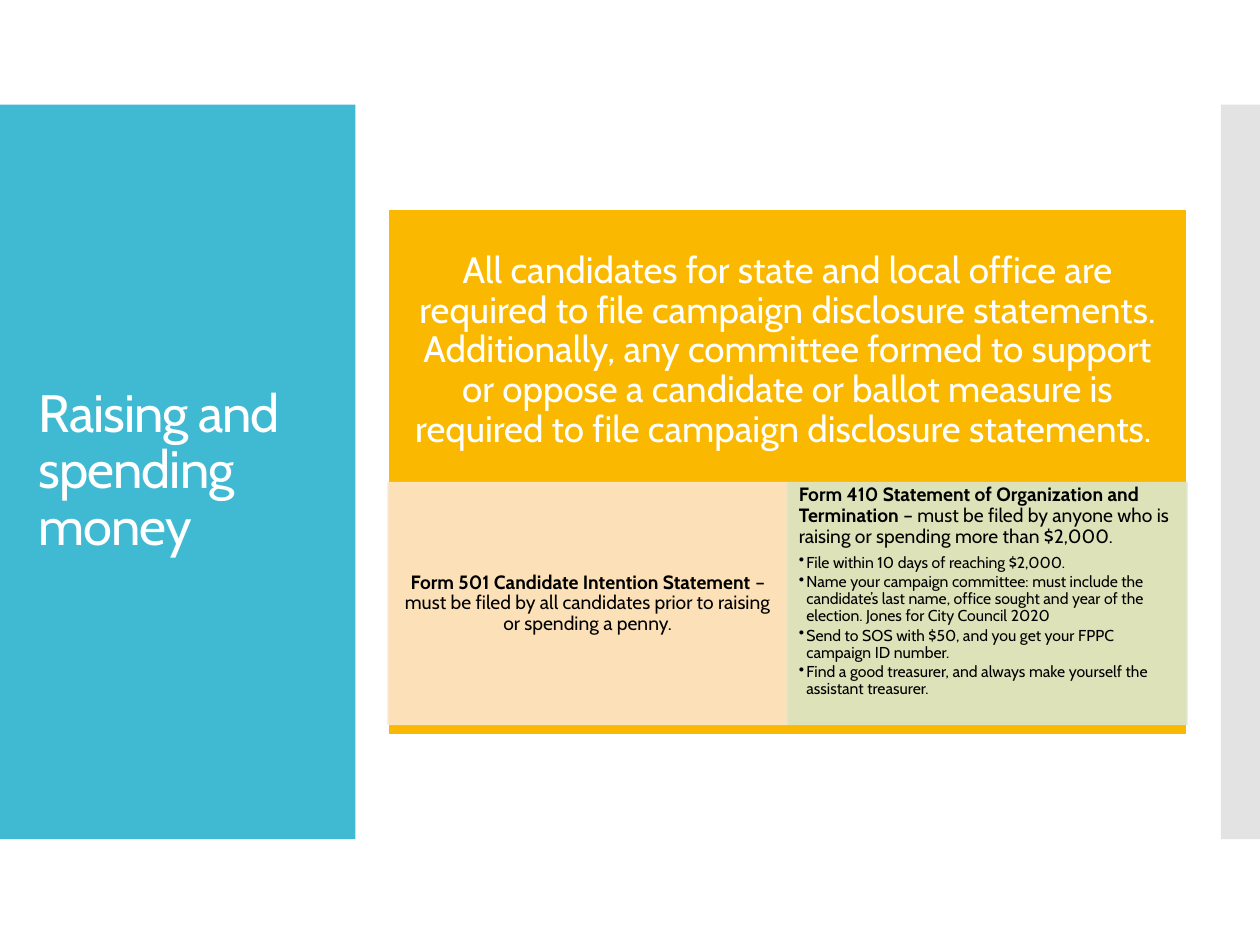
from lxml.etree import SubElement
from pptx import Presentation
from pptx.dml.color import RGBColor
from pptx.enum.shapes import MSO_SHAPE
from pptx.enum.text import MSO_ANCHOR, PP_ALIGN
from pptx.oxml.ns import qn
from pptx.util import Inches, Pt

FONT = "Cabin"
COLORS = {"teal": "40BAD2", "grey": "C8C8C8", "gold": "FAB900", "peach": "FDE6CC",
          "green": "DCE7CD", "white": "FFFFFF", "black": "000000"}
TITLE = "Raising and spending money"
INTRO = ("All candidates for state and local office are required to file campaign "
         "disclosure statements. Additionally, any committee formed to support or oppose "
         "a candidate or ballot measure is required to file campaign disclosure statements. ")
FORMS = [
    {"color": "peach", "anchor": MSO_ANCHOR.MIDDLE, "align": PP_ALIGN.CENTER,
     "name": "Form 501 Candidate Intention Statement ",
     "rule": "– must be filed by all candidates prior to raising or spending a penny.",
     "steps": []},
    {"color": "green", "anchor": MSO_ANCHOR.TOP, "align": PP_ALIGN.LEFT,
     "name": "Form 410 Statement of Organization and Termination ",
     "rule": "– must be filed by anyone who is raising or spending more than $2,000.",
     "steps": [
         "File within 10 days of reaching $2,000.",
         "Name your campaign committee: must include the candidate’s last name, "
         "office sought and year of the election. Jones for City Council 2020",
         "Send to SOS with $50, and you get your FPPC campaign ID number.",
         "Find a good treasurer, and always make yourself the assistant treasurer."]},
]

WIDTH, HEIGHT = 10, 7.5
BAND_TOP, BAND_HEIGHT = 0.83, 5.83
LEFT, TOP, PANEL_W, PANEL_H = 3.08, 1.66, 6.34, 4.17
INTRO_H, FORM_TOP, FORM_H = 2.25, 3.83, 1.92


def rgb(name):
    return RGBColor.from_string(COLORS[name])


def set_alpha(fill, percent):
    color = fill._xPr.find(qn("a:solidFill"))[0]
    SubElement(color, qn("a:alpha")).set("val", str(percent * 1000))


def add_box(s, box, color, line=None, alpha=None):
    sp = s.shapes.add_shape(MSO_SHAPE.RECTANGLE, *map(Inches, box))
    sp.shadow.inherit = False
    sp.fill.solid()
    sp.fill.fore_color.rgb = rgb(color)
    if line:
        sp.line.color.rgb = rgb(line)
        sp.line.width = Pt(0.85)
    else:
        sp.line.fill.background()
    if alpha:
        set_alpha(sp.fill, alpha)
        if line:
            set_alpha(sp.line.fill, alpha)
    return sp


def add_text(s, box, anchor, margins):
    tf = s.shapes.add_textbox(*map(Inches, box)).text_frame
    tf.word_wrap = True
    tf.vertical_anchor = anchor
    tf.margin_left = tf.margin_right = Inches(margins[0])
    tf.margin_top = tf.margin_bottom = Inches(margins[1])
    return tf


def write(p, parts, size, color, align=PP_ALIGN.LEFT, after=0):
    p.alignment = align
    p.line_spacing = 0.9
    p.space_after = Pt(after)
    for text, bold in parts:
        r = p.add_run()
        r.text = text
        r.font.name, r.font.size, r.font.bold = FONT, Pt(size), bold
        r.font.color.rgb = rgb(color)


def add_bullet(p):
    pPr = p._p.get_or_add_pPr()
    pPr.set("marL", str(Inches(0.06)))
    pPr.set("indent", str(-Inches(0.06)))
    SubElement(pPr, qn("a:buChar")).set("char", "•")


def add_form(s, form, box):
    add_box(s, box, form["color"], form["color"], 90)
    tf = add_text(s, box, form["anchor"], (0.09, 0.02))
    write(tf.paragraphs[0], [(form["name"], True), (form["rule"], False)],
          11, "black", form["align"], 4)
    for step in form["steps"]:
        p = tf.add_paragraph()
        write(p, [(step, False)], 9, "black", after=1.4)
        add_bullet(p)


def main():
    prs = Presentation()
    prs.slide_width, prs.slide_height = Inches(WIDTH), Inches(HEIGHT)
    s = prs.slides.add_slide(prs.slide_layouts[6])

    add_box(s, (0, BAND_TOP, 2.82, BAND_HEIGHT), "teal")
    add_box(s, (9.69, BAND_TOP, WIDTH - 9.69, BAND_HEIGHT), "grey", alpha=50)

    tf = add_text(s, (0.21, 1.86, 2.42, 3.77), MSO_ANCHOR.MIDDLE, (0.1, 0.05))
    write(tf.paragraphs[0], [(TITLE, False)], 30, "white")
    tf.paragraphs[0].runs[0].font._element.set("spc", "-60")

    add_box(s, (LEFT, TOP, PANEL_W, PANEL_H), "gold", "white")
    tf = add_text(s, (LEFT, TOP, PANEL_W, INTRO_H), MSO_ANCHOR.MIDDLE, (0.16, 0.16))
    write(tf.paragraphs[0], [(INTRO, False)], 21, "white", PP_ALIGN.CENTER)

    form_w = PANEL_W / len(FORMS)
    for i, form in enumerate(FORMS):
        add_form(s, form, (LEFT + i * form_w, FORM_TOP, form_w, FORM_H))

    prs.save("out.pptx")


if __name__ == "__main__":
    main()
